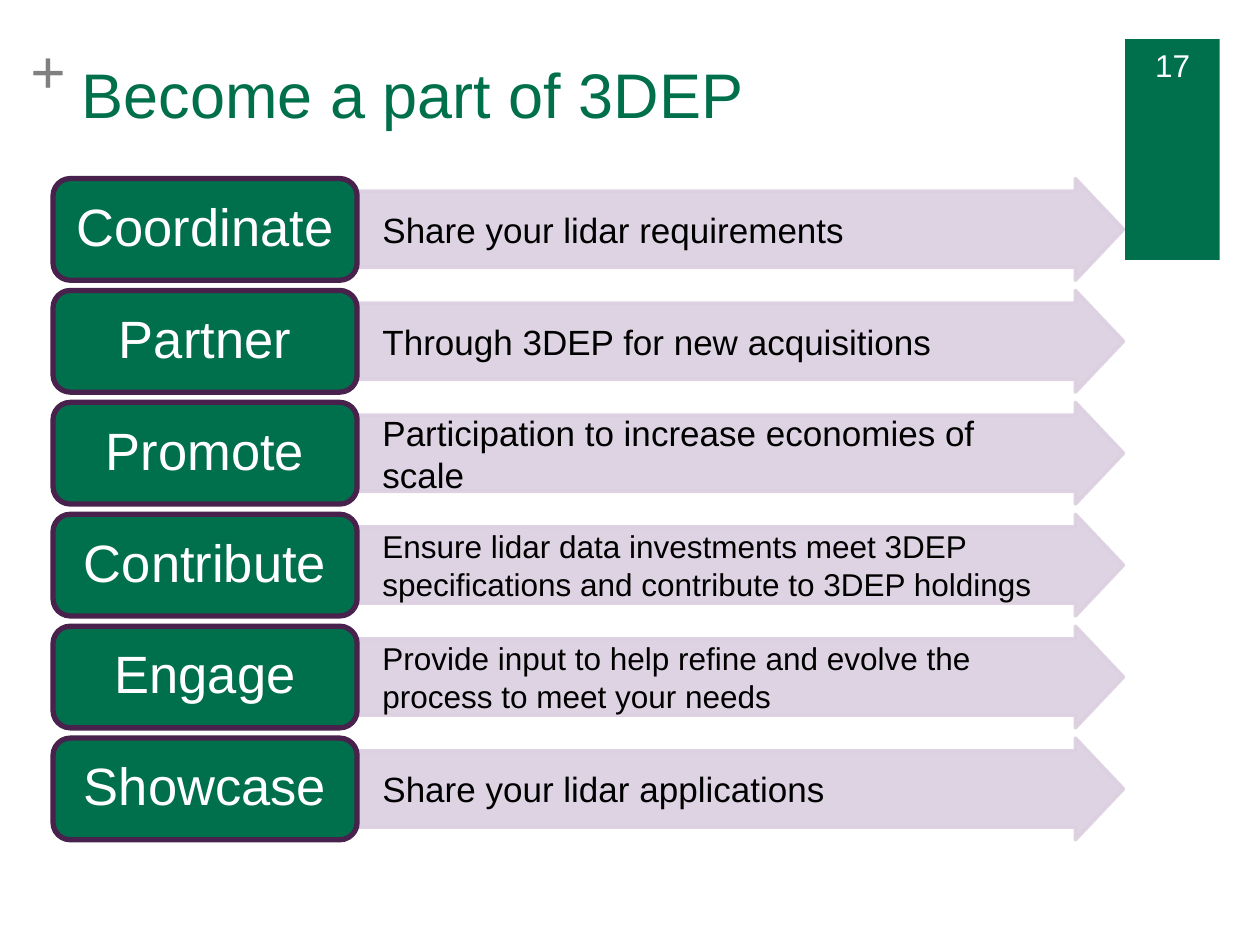
from dataclasses import dataclass

from lxml.etree import SubElement
from pptx import Presentation
from pptx.dml.color import RGBColor
from pptx.dml.fill import FillFormat
from pptx.enum.shapes import MSO_SHAPE
from pptx.enum.text import MSO_ANCHOR, MSO_AUTO_SIZE, PP_ALIGN
from pptx.oxml.ns import qn
from pptx.slide import Slide
from pptx.text.text import TextFrame
from pptx.util import Cm, Pt


@dataclass(frozen=True)
class Theme:
    green: str = "006F4B"
    plum: str = "48224C"
    lilac: str = "DBCFE0"
    grey: str = "808080"
    white: str = "FFFFFF"
    black: str = "000000"
    font: str = "Arial"
    plus_font: str = "Times New Roman"
    title_size: float = 36
    action_size: float = 30
    detail_size: float = 20
    small_size: float = 18
    opacity: int = 90


@dataclass(frozen=True)
class Box:
    left: float
    top: float
    width: float
    height: float

    def lengths(self) -> tuple:
        return Cm(self.left), Cm(self.top), Cm(self.width), Cm(self.height)


@dataclass(frozen=True)
class Step:
    action: str
    detail: str
    detail_size: float


THEME = Theme()
STEPS = [
    Step("Coordinate", "Share your lidar requirements", THEME.detail_size),
    Step("Partner", "Through 3DEP for new acquisitions", THEME.detail_size),
    Step("Promote", "Participation to increase economies of scale", THEME.detail_size),
    Step("Contribute", "Ensure lidar data investments meet 3DEP specifications "
         "and contribute to 3DEP holdings", THEME.small_size),
    Step("Engage", "Provide input to help refine and evolve the process "
         "to meet your needs", THEME.small_size),
    Step("Showcase", "Share your lidar applications", THEME.detail_size),
]

# Step grid, in centimetres
FIRST_TOP, LAST_TOP = 3.6, 14.88
ROW_HEIGHT = 2.05
ACTION_LEFT, ACTION_WIDTH = 1.07, 6.13
ARROW_LEFT, ARROW_WIDTH = 7.2, 15.45
HEAD_LENGTH, SHAFT_SHARE = 0.97, 0.75
CORNER = 0.17


def write(frame: TextFrame, text: str, *, size: float, color: str,
          font: str = THEME.font, bold: bool = False,
          align: PP_ALIGN = PP_ALIGN.LEFT, anchor: MSO_ANCHOR = MSO_ANCHOR.TOP,
          insets: tuple = (0.25, 0.13, 0.25, 0.13), line_spacing: float = 1.0) -> None:
    """Fill a frame with one formatted paragraph; insets run left, top, right, bottom."""
    frame.word_wrap = True
    frame.auto_size = MSO_AUTO_SIZE.NONE
    frame.vertical_anchor = anchor
    (frame.margin_left, frame.margin_top,
     frame.margin_right, frame.margin_bottom) = map(Cm, insets)
    paragraph = frame.paragraphs[0]
    paragraph.alignment = align
    paragraph.line_spacing = line_spacing
    run = paragraph.add_run()
    run.text = text
    run.font.name = font
    run.font.size = Pt(size)
    run.font.bold = bold
    run.font.color.rgb = RGBColor.from_string(color)


def paint(fill: FillFormat, color: str) -> None:
    fill.solid()
    fill.fore_color.rgb = RGBColor.from_string(color)


def add_panel(slide: Slide, kind: MSO_SHAPE, box: Box, fill: str,
              line: str = "", line_width: float = 0, opacity: int = 100):
    panel = slide.shapes.add_shape(kind, *box.lengths())
    panel.shadow.inherit = False
    paint(panel.fill, fill)
    if line:
        paint(panel.line.fill, line)
        panel.line.width = Pt(line_width)
    else:
        panel.line.fill.background()
    if opacity < 100:
        for color in panel.element.spPr.iter(qn("a:srgbClr")):
            SubElement(color, qn("a:alpha"), val=str(opacity * 1000))
    return panel


def add_label(slide: Slide, box: Box, text: str, **text_format) -> None:
    write(slide.shapes.add_textbox(*box.lengths()).text_frame, text, **text_format)


def add_step(slide: Slide, step: Step, top: float) -> None:
    # Arrow with the detail
    arrow = add_panel(slide, MSO_SHAPE.RIGHT_ARROW,
                      Box(ARROW_LEFT, top, ARROW_WIDTH, ROW_HEIGHT),
                      THEME.lilac, THEME.lilac, 2, THEME.opacity)
    arrow.adjustments[0] = SHAFT_SHARE
    arrow.adjustments[1] = HEAD_LENGTH / ROW_HEIGHT
    write(arrow.text_frame, step.detail, size=step.detail_size, color=THEME.black,
          anchor=MSO_ANCHOR.MIDDLE, insets=(0.51, 0.02, 0.55, 0.02))

    # Rounded box with the action
    action = add_panel(slide, MSO_SHAPE.ROUNDED_RECTANGLE,
                       Box(ACTION_LEFT, top, ACTION_WIDTH, ROW_HEIGHT),
                       THEME.green, THEME.plum, 3)
    action.adjustments[0] = CORNER
    write(action.text_frame, step.action, size=THEME.action_size, color=THEME.white,
          align=PP_ALIGN.CENTER, anchor=MSO_ANCHOR.MIDDLE,
          insets=(0.3, 0.15, 0.3, 0.15), line_spacing=0.9)


def main() -> None:
    deck = Presentation()
    deck.slide_width, deck.slide_height = Cm(25.4), Cm(19.05)
    slide = deck.slides.add_slide(deck.slide_layouts[5])

    # Page tab and plus sign
    add_panel(slide, MSO_SHAPE.RECTANGLE, Box(22.68, 0.79, 1.91, 4.45), THEME.green)
    add_label(slide, Box(22.7, 0.79, 1.88, 1.02), "17", size=THEME.small_size,
              color=THEME.white, align=PP_ALIGN.CENTER)
    add_label(slide, Box(0.61, 0.64, 0.74, 3.07), "+", size=THEME.title_size,
              color=THEME.grey, font=THEME.plus_font, bold=True, insets=(0, 0, 0, 0))

    # Title
    title = slide.shapes.title
    title.left, title.top, title.width, title.height = Box(1.4, 0.38, 20.98, 2.39).lengths()
    write(title.text_frame, "Become a part of 3DEP", size=THEME.title_size,
          color=THEME.green, anchor=MSO_ANCHOR.BOTTOM)

    # Steps, evenly spaced
    pitch = (LAST_TOP - FIRST_TOP) / (len(STEPS) - 1)
    for row, step in enumerate(STEPS):
        add_step(slide, step, FIRST_TOP + row * pitch)

    deck.save("out.pptx")


if __name__ == "__main__":
    main()
